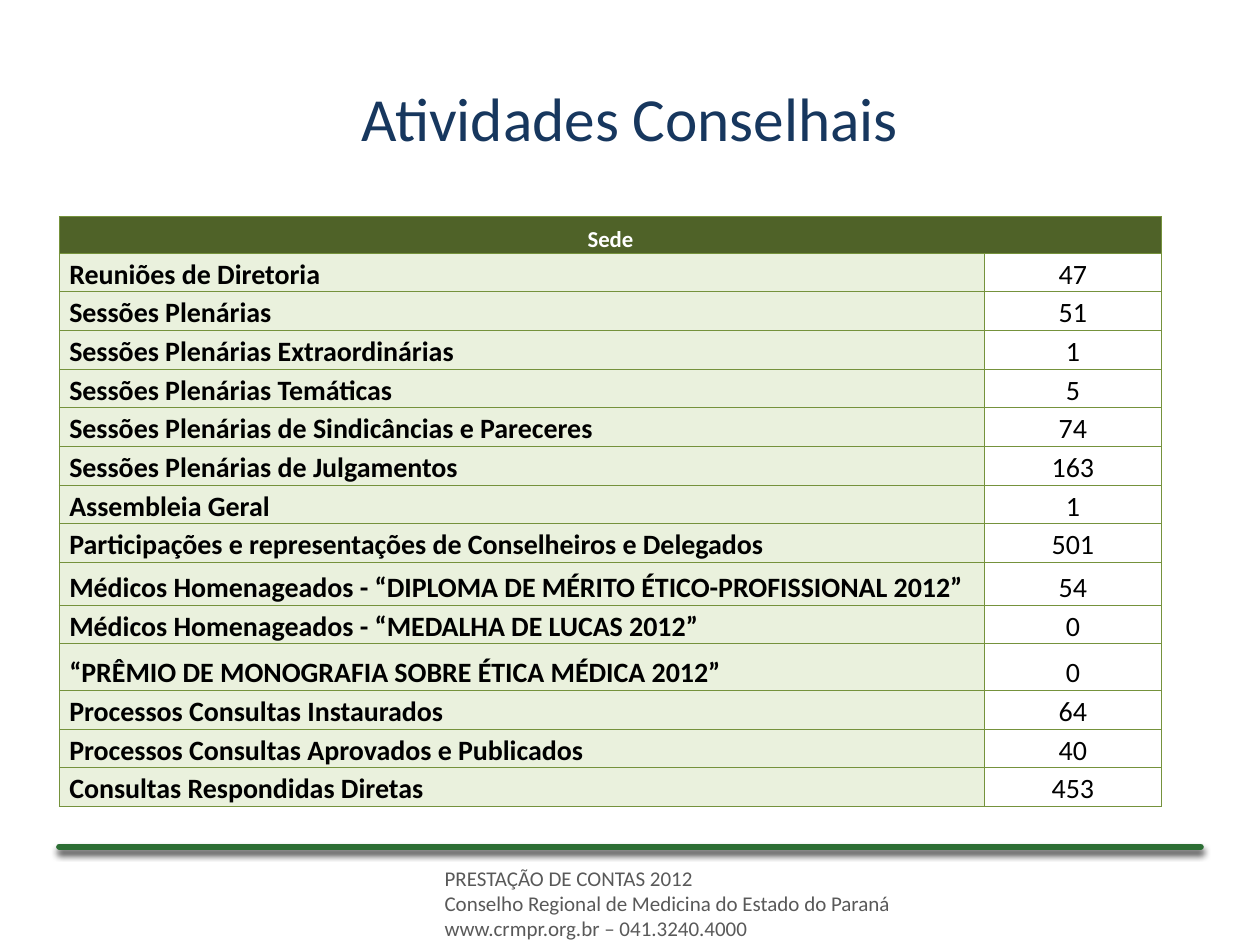
import pptx
import pptx.dml.color
import pptx.enum.shapes
import pptx.enum.text
import pptx.oxml
import pptx.oxml.ns
import pptx.util
from lxml import etree

Inches = pptx.util.Inches
Pt = pptx.util.Pt
RGBColor = pptx.dml.color.RGBColor
Align = pptx.enum.text.PP_ALIGN
Anchor = pptx.enum.text.MSO_ANCHOR

NAVY = RGBColor(0x17, 0x37, 0x5E)
GRAY = RGBColor(0x59, 0x59, 0x59)
RULE_GREEN = RGBColor(0x2C, 0x6E, 0x34)
HEADER_GREEN = RGBColor(0x4F, 0x62, 0x28)
LABEL_GREEN = RGBColor(0xEA, 0xF1, 0xDD)
BORDER_GREEN = RGBColor(0x75, 0x92, 0x3C)
WHITE = RGBColor(0xFF, 0xFF, 0xFF)
BLACK = RGBColor(0, 0, 0)
FONT = "Calibri"

HEADING = "Sede"
ACTIVITIES = [
    ("Reuniões de Diretoria", 47),
    ("Sessões Plenárias", 51),
    ("Sessões Plenárias Extraordinárias", 1),
    ("Sessões Plenárias Temáticas", 5),
    ("Sessões Plenárias de Sindicâncias e Pareceres", 74),
    ("Sessões Plenárias de Julgamentos", 163),
    ("Assembleia Geral", 1),
    ("Participações e representações de Conselheiros e Delegados", 501),
    ("Médicos Homenageados - “DIPLOMA DE MÉRITO ÉTICO-PROFISSIONAL 2012”", 54),
    ("Médicos Homenageados - “MEDALHA DE LUCAS 2012”", 0),
    ("“PRÊMIO DE MONOGRAFIA SOBRE ÉTICA MÉDICA 2012”", 0),
    ("Processos Consultas Instaurados", 64),
    ("Processos Consultas Aprovados e Publicados", 40),
    ("Consultas Respondidas Diretas", 453),
]
ROW_HEIGHT = 0.307
SPECIAL_HEIGHTS = {0: 0.29, 9: 0.34, 11: 0.37}
VALUE_WIDTH = 1.41


def format_text(text_frame, size, color, alignment, bold=False):
    for paragraph in text_frame.paragraphs:
        paragraph.alignment = alignment
        font = paragraph.font
        font.name, font.size, font.bold = FONT, Pt(size), bold
        font.color.rgb = color
        for run in paragraph.runs:
            run.font.name, run.font.size, run.font.bold = FONT, Pt(size), bold
            run.font.color.rgb = color


def add_text(slide, box, text, size, color, alignment, anchor):
    shape = slide.shapes.add_textbox(*map(Inches, box))
    text_frame = shape.text_frame
    text_frame.word_wrap = True
    text_frame.vertical_anchor = anchor
    text_frame.text = text
    format_text(text_frame, size, color, alignment)


def add_title(slide, box):
    add_text(slide, box, "Atividades Conselhais", 35, NAVY, Align.CENTER, Anchor.MIDDLE)


def set_borders(cell):
    properties = cell._tc.get_or_add_tcPr()
    for position, side in enumerate(("lnL", "lnR", "lnT", "lnB")):
        line = etree.Element(pptx.oxml.ns.qn(f"a:{side}"), w=str(Pt(0.5)))
        fill = etree.SubElement(line, pptx.oxml.ns.qn("a:solidFill"))
        etree.SubElement(fill, pptx.oxml.ns.qn("a:srgbClr"), val=str(BORDER_GREEN))
        properties.insert(position, line)


def fill_cell(cell, text, size, color, alignment, bold, fill, left_margin=0.01):
    cell.text_frame.text = text
    format_text(cell.text_frame, size, color, alignment, bold)
    cell.vertical_anchor = Anchor.BOTTOM
    cell.margin_left = Inches(left_margin)
    cell.margin_right = cell.margin_top = Inches(0.01)
    cell.margin_bottom = 0
    if fill is None:
        cell.fill.background()
    else:
        cell.fill.solid()
        cell.fill.fore_color.rgb = fill
    set_borders(cell)


def add_activity_table(slide, box):
    row_count = len(ACTIVITIES) + 1
    table = slide.shapes.add_table(row_count, 2, *map(Inches, box)).table
    table.columns[0].width = Inches(box[2] - VALUE_WIDTH)
    table.columns[1].width = Inches(VALUE_WIDTH)
    for index, row in enumerate(table.rows):
        row.height = Inches(SPECIAL_HEIGHTS.get(index, ROW_HEIGHT))
    for column, text in enumerate((HEADING, "")):
        fill_cell(table.cell(0, column), text, 13, WHITE, Align.CENTER, True, HEADER_GREEN)
    table.cell(0, 0).merge(table.cell(0, 1))
    for row, (label, value) in enumerate(ACTIVITIES, 1):
        fill_cell(table.cell(row, 0), label, 16, BLACK, Align.LEFT, True, LABEL_GREEN, 0.08)
        fill_cell(table.cell(row, 1), str(value), 16, BLACK, Align.CENTER, False, None)


def add_rule(slide, left, top, width):
    connector = slide.shapes.add_connector(
        pptx.enum.shapes.MSO_CONNECTOR.STRAIGHT,
        Inches(left), Inches(top), Inches(left + width), Inches(top))
    connector.line.color.rgb = RULE_GREEN
    connector.line.width = Pt(3.5)
    connector.line._get_or_add_ln().set("cap", "rnd")
    connector._element.spPr.append(pptx.oxml.parse_xml(
        f'<a:effectLst {pptx.oxml.ns.nsdecls("a")}>'
        f'<a:outerShdw blurRad="{Pt(4)}" dist="{Pt(3)}" dir="5400000" rotWithShape="0">'
        '<a:srgbClr val="000000"><a:alpha val="73000"/></a:srgbClr>'
        '</a:outerShdw></a:effectLst>'))


def add_footer(slide, box):
    left, top, width, height = box
    add_rule(slide, left, top, width)
    text = "\n".join((
        "PRESTAÇÃO DE CONTAS 2012",
        "Conselho Regional de Medicina do Estado do Paraná",
        "www.crmpr.org.br – 041.3240.4000",
    ))
    text_box = (left + 2.96, top + 0.1, 4.88, height - 0.1)
    add_text(slide, text_box, text, 12, GRAY, Align.LEFT, Anchor.TOP)


def main():
    presentation = pptx.Presentation()
    presentation.slide_width = Inches(10)
    presentation.slide_height = Inches(7.5)
    slide = presentation.slides.add_slide(presentation.slide_layouts[6])
    add_footer(slide, (0.47, 6.72, 9.06, 0.81))
    add_title(slide, (0.5, 0.3, 9, 1.25))
    add_activity_table(slide, (0.47, 1.72, 8.75, 4.69))
    presentation.save("out.pptx")


if __name__ == "__main__":
    main()
